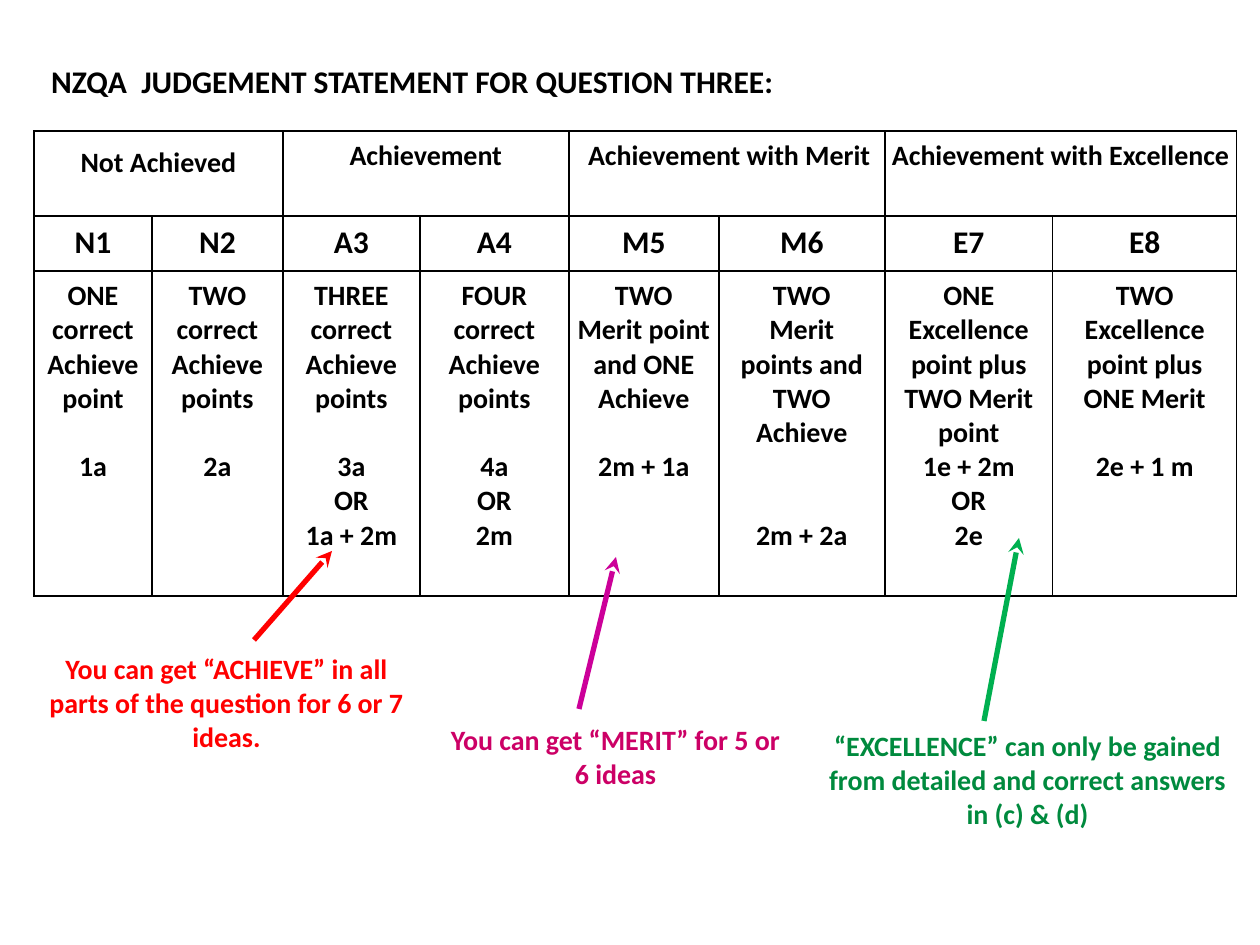
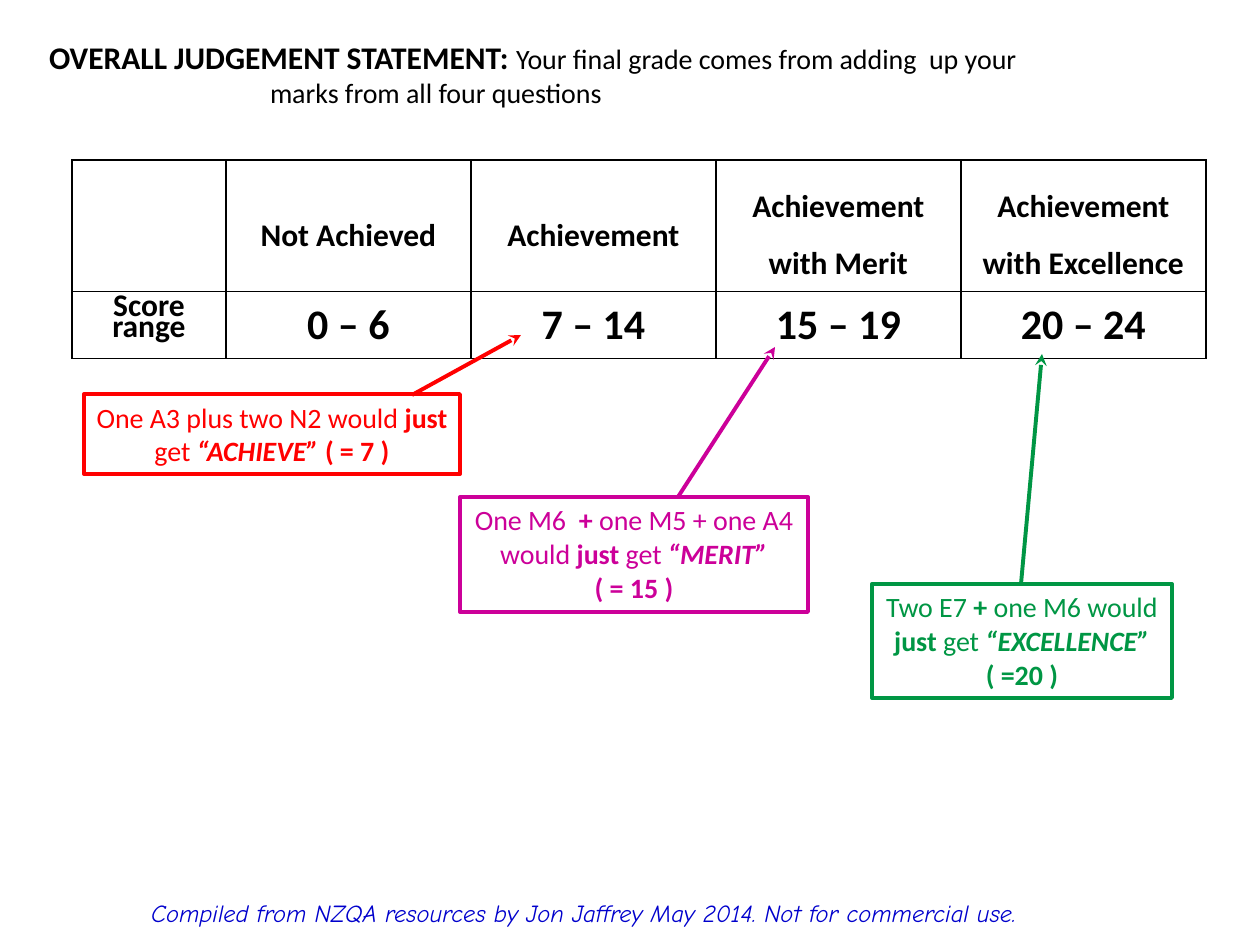
from dataclasses import dataclass
from typing import NamedTuple

from lxml.etree import SubElement
from pptx import Presentation
from pptx.dml.color import RGBColor as RGB
from pptx.enum.shapes import MSO_CONNECTOR as Conn, MSO_SHAPE as Shape
from pptx.enum.text import MSO_ANCHOR as Anchor, MSO_AUTO_SIZE as Auto, PP_ALIGN as Align
from pptx.oxml.ns import qn
from pptx.util import Emu, Pt

PX_PER_INCH = 126


def px(n: int) -> Emu:
    return Emu(round(n * 914400 / PX_PER_INCH))


# Shared look
@dataclass(frozen=True)
class Theme:
    font: str = "Calibri"
    credit_font: str = "Comic Neue"
    black: str = "000000"
    white: str = "FFFFFF"
    red: str = "FF0000"
    magenta: str = "CC0099"
    rose: str = "CC0066"
    green: str = "009644"
    dark_green: str = "008A3E"
    light_green: str = "00B050"
    blue: str = "0000CC"
    credit_size: int = 14
    body: int = 16
    heading: int = 18
    score: int = 24
    blank_line: float = 19.5  # height of one body line in points


T = Theme()


class Box(NamedTuple):
    x: int
    y: int
    w: int
    h: int


class Run(NamedTuple):
    text: str
    bold: bool = False
    italic: bool = False
    size: int = 0


class Para(NamedTuple):
    runs: str | list[Run]
    gap: int = 0  # body lines left free above
    left: int = 0
    indent: int = 0
    spacing: float | Pt | None = None


@dataclass(frozen=True)
class Note:
    box: Box
    paras: list
    color: str
    arrow: Box  # start x, start y, end x, end y
    arrow_color: str
    bold: bool = False
    fill: str = ""
    border: float = 0
    arrow_width: float = 3


# Text
def write(tf, paras, size=T.body, color=T.black, bold=False, italic=False,
          font=T.font, align=Align.CENTER) -> None:
    """Fill a text frame with strings or Paras in one format."""
    for i, para in enumerate(paras):
        para = Para(para) if isinstance(para, str) else para
        p = tf.paragraphs[0] if i == 0 else tf.add_paragraph()
        p.alignment = align
        p.line_spacing = para.spacing
        if para.gap:
            p.space_before = Pt(para.gap * T.blank_line)
        if para.left:
            pPr = p._p.get_or_add_pPr()
            pPr.set("marL", str(px(para.left)))
            pPr.set("indent", str(px(para.indent)))
        runs = [Run(para.runs)] if isinstance(para.runs, str) else para.runs
        for run in runs:
            r = p.add_run()
            r.text = run.text
            f = r.font
            f.name, f.size = font, Pt(run.size or size)
            f.bold, f.italic = bold or run.bold, italic or run.italic
            f.color.rgb = RGB.from_string(color)


def set_frame(tf, wrap: bool = True) -> None:
    tf.word_wrap, tf.auto_size = wrap, Auto.NONE
    tf.vertical_anchor = Anchor.TOP
    tf.margin_left = tf.margin_right = px(10)
    tf.margin_top = tf.margin_bottom = px(6)


def place(sp, box: Box) -> None:
    sp.left, sp.top, sp.width, sp.height = map(px, box)


def add_titled_slide(prs, box: Box, paras):
    s = prs.slides.add_slide(prs.slide_layouts[5])
    place(s.shapes.title, box)
    set_frame(s.shapes.title.text_frame)
    write(s.shapes.title.text_frame, paras, T.heading, align=Align.LEFT)
    return s


# Tables
def add_grid(s, x: int, y: int, cols: list[int], rows: list[int]):
    """Add an unfilled table with thin black borders."""
    frame = s.shapes.add_table(len(rows), len(cols), px(x), px(y),
                               px(sum(cols)), px(sum(rows)))
    table = frame.table
    table.first_row = table.horz_banding = False
    for col, w in zip(table.columns, cols):
        col.width = px(w)
    for row, h in zip(table.rows, rows):
        row.height = px(h)
    for cell in table.iter_cells():
        tcPr = cell._tc.get_or_add_tcPr()
        for side in ("a:lnL", "a:lnR", "a:lnT", "a:lnB"):
            ln = SubElement(tcPr, qn(side), w=str(Pt(1)))
            SubElement(SubElement(ln, qn("a:solidFill")), qn("a:srgbClr"), val=T.black)
        cell.fill.background()
        cell.margin_left = cell.margin_right = px(7)
        cell.margin_top = cell.margin_bottom = px(8)
    return table


# Notes with arrows
def add_arrow(s, ends: Box, color: str, width: float) -> None:
    c = s.shapes.add_connector(Conn.STRAIGHT, *map(px, ends))
    c.line.color.rgb = RGB.from_string(color)
    c.line.width = Pt(width)
    spPr = c.element.spPr
    SubElement(spPr.find(qn("a:ln")), qn("a:tailEnd"), type="stealth")
    SubElement(spPr, qn("a:effectLst"))


def add_note(s, note: Note) -> None:
    sp = s.shapes.add_shape(Shape.RECTANGLE, *map(px, note.box))
    sp.shadow.inherit = False
    if note.fill:
        sp.fill.solid()
        sp.fill.fore_color.rgb = RGB.from_string(note.fill)
    else:
        sp.fill.background()
    if note.border:
        sp.line.color.rgb = RGB.from_string(note.color)
        sp.line.width = Pt(note.border)
    else:
        sp.line.fill.background()
    set_frame(sp.text_frame)
    write(sp.text_frame, note.paras, color=note.color, bold=note.bold)
    add_arrow(s, note.arrow, note.arrow_color, note.arrow_width)


def boxed(box: Box, paras, color: str, arrow: Box) -> Note:
    return Note(box, paras, color, arrow, color, border=2.25, arrow_width=2.25)


# Slide 1: grades for question three
BANDS = [
    Para("Not Achieved", spacing=1.2),
    Para("Achievement"),
    Para("Achievement with Merit", left=18, indent=-13),
    Para("Achievement with Excellence", left=15, indent=-15),
]
GRADES = {
    "N1": ["ONE correct Achieve point", Para("1a", gap=1)],
    "N2": ["TWO correct Achieve points", Para("2a", gap=1)],
    "A3": ["THREE correct Achieve points", Para("3a", gap=1), "OR", "1a + 2m"],
    "A4": ["FOUR correct Achieve points", Para("4a", gap=1), "OR", "2m"],
    "M5": ["TWO", "Merit point and ONE Achieve", Para("2m + 1a", gap=1)],
    "M6": ["TWO", "Merit", "points and TWO Achieve", Para("2m + 2a", gap=2)],
    "E7": ["ONE Excellence point plus TWO Merit point", "1e + 2m", "OR", "2e"],
    "E8": ["TWO Excellence point plus ONE Merit", Para("2e + 1 m", gap=1)],
}
QUESTION_NOTES = [
    Note(Box(32, 646, 389, 115),
         ["You can get “ACHIEVE” in all parts of the question for 6 or 7 ideas."],
         T.red, Box(254, 640, 332, 551), T.red, bold=True, fill=T.white),
    Note(Box(433, 717, 365, 81), ["You can get “MERIT” for 5 or 6 ideas"],
         T.rose, Box(579, 709, 616, 557), T.magenta, bold=True),
    Note(Box(817, 723, 421, 115),
         ["“EXCELLENCE” can only be gained from detailed and correct answers in (c) & (d)"],
         T.dark_green, Box(984, 721, 1019, 538), T.light_green, bold=True),
]


def question_slide(prs) -> None:
    s = add_titled_slide(prs, Box(41, 56, 1009, 50), [
        Para([Run("NZQA  JUDGEMENT STATEMENT FOR QUESTION THREE:", bold=True)])])
    table = add_grid(s, 34, 131, [118, 131, 137, 149, 150, 166, 168, 184], [85, 55, 325])
    for i, band in enumerate(BANDS):
        cell = table.cell(0, 2 * i)
        cell.merge(table.cell(0, 2 * i + 1))
        write(cell.text_frame, [band], bold=True)
    for col, (grade, rule) in enumerate(GRADES.items()):
        write(table.cell(1, col).text_frame, [grade], T.heading, bold=True)
        write(table.cell(2, col).text_frame, rule, bold=True)
    for note in QUESTION_NOTES:
        add_note(s, note)


# Slide 2: overall score ranges
SCORES = {
    "Not Achieved": "0 – 6",
    "Achievement": "7 – 14",
    "Achievement with Merit": "15 – 19",
    "Achievement with Excellence": "20 – 24",
}
SCORE_NOTES = [
    boxed(Box(84, 394, 376, 80), [
        Para([Run("One A3 plus two N2 would "), Run("just", True), Run(" get "),
              Run("“ACHIEVE” ", True, True), Run("( = 7 )", True)])],
        T.red, Box(412, 395, 521, 335)),
    boxed(Box(460, 497, 348, 115), [
        Para([Run("One M6  "), Run("+", True), Run(" one M5 + one A4 would "),
              Run("just ", True), Run("get "), Run("“MERIT”", True, True)]),
        Para([Run("( = 15 )", True)])],
        T.magenta, Box(678, 497, 775, 347)),
    boxed(Box(872, 584, 300, 114), [
        Para([Run("Two E7 "), Run("+", True), Run(" one M6 would "),
              Run("just", True), Run(" get "), Run("“EXCELLENCE”", True, True)]),
        Para([Run("( =20 )", True)])],
        T.green, Box(1021, 584, 1042, 354)),
]


def overall_slide(prs) -> None:
    s = add_titled_slide(prs, Box(39, 32, 1013, 84), [
        Para([Run("OVERALL JUDGEMENT STATEMENT: ", bold=True),
              Run("Your final grade comes from adding  up your", size=T.body)]),
        Para([Run("marks from all four questions", size=T.body)], left=221)])
    table = add_grid(s, 72, 160, [154] + [245] * 4, [130, 67])
    label = table.cell(1, 0)
    label.vertical_anchor = Anchor.MIDDLE
    write(label.text_frame, [Para("Score range", spacing=Pt(12))], T.heading, bold=True)
    for col, (band, score) in enumerate(SCORES.items(), 1):
        head = table.cell(0, col)
        head.vertical_anchor = Anchor.MIDDLE
        write(head.text_frame, [Para(band, spacing=1.5)], T.heading, bold=True)
        write(table.cell(1, col).text_frame, [score], T.score, bold=True)
    for note in SCORE_NOTES:
        add_note(s, note)
    # Credit line
    tf = s.shapes.add_textbox(*map(px, Box(141, 892, 1000, 43))).text_frame
    set_frame(tf, wrap=False)
    write(tf, ["Compiled from NZQA resources by Jon Jaffrey May 2014. Not for commercial use."],
          T.credit_size, T.blue, italic=True, font=T.credit_font, align=Align.LEFT)


def main() -> None:
    prs = Presentation()
    prs.slide_width, prs.slide_height = px(1260), px(945)
    question_slide(prs)
    overall_slide(prs)
    prs.save("out.pptx")


if __name__ == "__main__":
    main()
